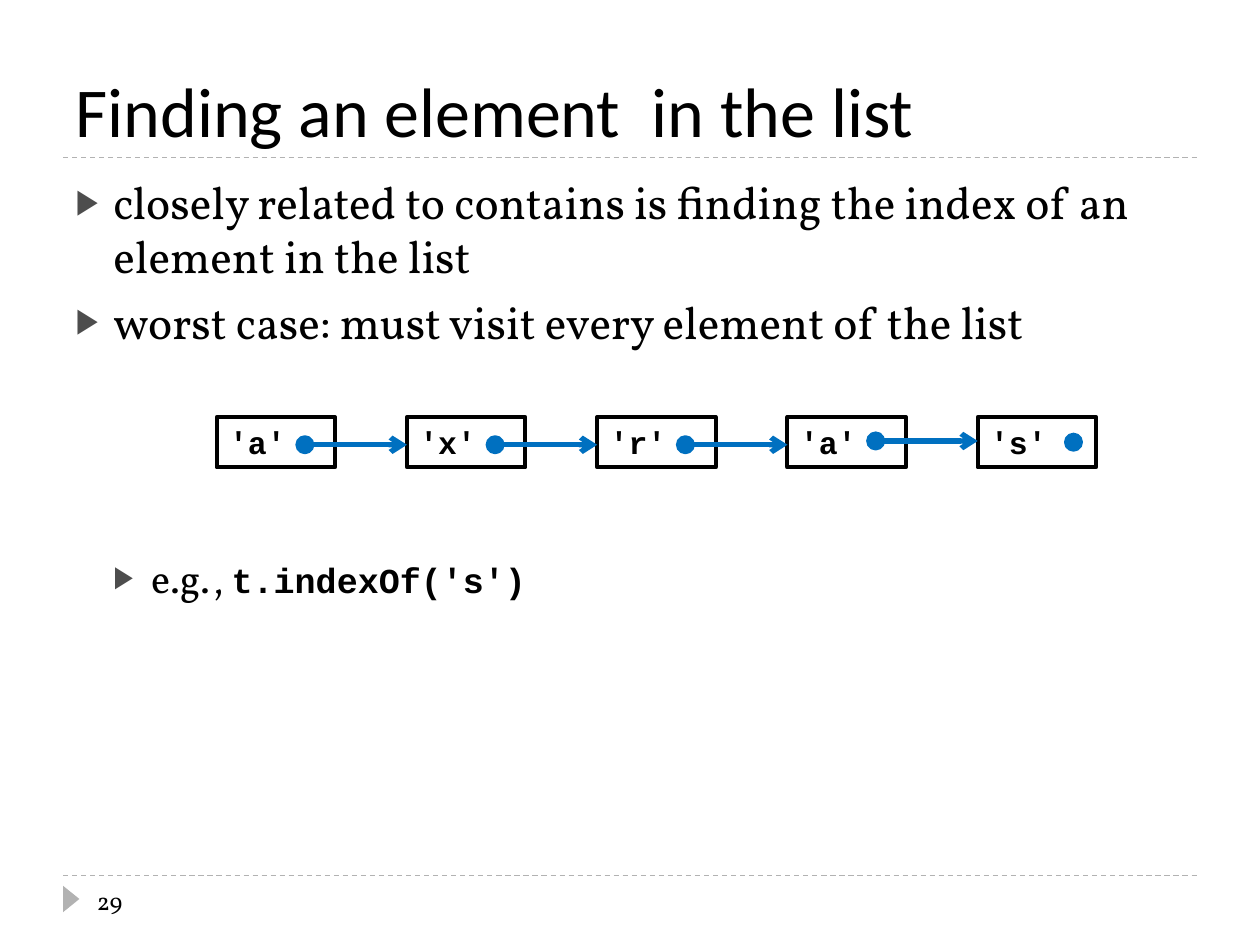
from pptx import Presentation
from pptx.dml.color import RGBColor
from pptx.enum.dml import MSO_LINE
from pptx.enum.shapes import MSO_CONNECTOR, MSO_SHAPE
from pptx.enum.text import MSO_ANCHOR, MSO_AUTO_SIZE, PP_ALIGN
from pptx.oxml.ns import qn
from pptx.util import Inches, Pt
from lxml.etree import SubElement

# Content
TITLE = "Finding an element  in the list"
SERIF, SANS, MONO = "Vollkorn", "Calibri", "Courier New"
BLACK, BLUE, GREY, DARK = "000000", "0070C0", "B2B2B2", "4D4D4D"
# (indent in inches, space before in points, runs of text, size, font, bold)
BULLETS = [
    (0.3, 6, [("closely related to contains is finding the index of an "
               "element in the list", 26, SERIF, False)]),
    (0.3, 6, [("worst case: must visit every element of the list", 26, SERIF, False)]),
    (0.6, 117, [("e.g., ", 23, SERIF, False), ("t.indexOf('s')", 20, MONO, True)]),
]
# (value, dot centre x from the node's left edge, dot centre y)
NODES = [("'a'", 0.7, 3.53), ("'x'", 0.7, 3.53), ("'r'", 0.7, 3.53),
         ("'a'", 0.7, 3.5), ("'s'", 0.76, 3.51)]
NODE_X, NODE_Y, NODE_W, NODE_H, STEP = 1.72, 3.31, 0.94, 0.4, 1.51
DOT = 0.13
RULES = [1.25, 6.95]


def color(hex_text):
    return RGBColor.from_string(hex_text)


def add_run(p, text, size, font, bold=False):
    r = p.add_run()
    r.text = text
    r.font.size, r.font.name, r.font.bold = Pt(size), font, bold
    r.font.color.rgb = color(BLACK)


def add_bullet(p, indent):
    pPr = p._p.get_or_add_pPr()
    pPr.set("marL", str(Inches(indent)))
    pPr.set("indent", str(Inches(-0.3)))
    clr = SubElement(pPr, qn("a:buClr"))
    SubElement(clr, qn("a:srgbClr"), val=DARK)
    SubElement(pPr, qn("a:buSzPct"), val="76000")
    SubElement(pPr, qn("a:buFont"), typeface="Arial")
    SubElement(pPr, qn("a:buChar"), char="▶")


def add_line(s, x1, y1, x2, y2, hex_text, width):
    c = s.shapes.add_connector(MSO_CONNECTOR.STRAIGHT, Inches(x1), Inches(y1),
                               Inches(x2), Inches(y2))
    c.line.color.rgb, c.line.width = color(hex_text), Pt(width)
    SubElement(c._element.spPr, qn("a:effectLst"))
    return c


def add_shape(s, kind, x, y, w, h, fill=None, line=None, width=0):
    sp = s.shapes.add_shape(kind, Inches(x), Inches(y), Inches(w), Inches(h))
    sp.shadow.inherit = False
    if fill:
        sp.fill.solid()
        sp.fill.fore_color.rgb = color(fill)
    else:
        sp.fill.background()
    if line:
        sp.line.color.rgb, sp.line.width = color(line), Pt(width)
    else:
        sp.line.fill.background()
    return sp


def place(sp, x, y, w, h, anchor):
    sp.left, sp.top, sp.width, sp.height = map(Inches, (x, y, w, h))
    tf = sp.text_frame
    tf.word_wrap, tf.auto_size = True, MSO_AUTO_SIZE.NONE
    tf.vertical_anchor = anchor
    return tf


prs = Presentation()
prs.slide_width, prs.slide_height = Inches(10), Inches(7.5)
s = prs.slides.add_slide(prs.slide_layouts[1])

# Title
tf = place(s.shapes.title, 0.5, 0.17, 9, 1.08, MSO_ANCHOR.BOTTOM)
tf.paragraphs[0].alignment = PP_ALIGN.LEFT
add_run(tf.paragraphs[0], TITLE, 40, SANS)

# Bullet list, with room for the diagram above the example
tf = place(s.placeholders[1], 0.5, 1.33, 9, 5.4, MSO_ANCHOR.TOP)
for i, (indent, before, runs) in enumerate(BULLETS):
    p = tf.add_paragraph() if i else tf.paragraphs[0]
    p.level = 1 if indent > 0.3 else 0
    p.space_before = Pt(before)
    add_bullet(p, indent)
    for run in runs:
        add_run(p, *run)

# Rules and slide number
for y in RULES:
    add_line(s, 0.5, y, 9.5, y, GREY, 0.75).line.dash_style = MSO_LINE.DASH
add_shape(s, MSO_SHAPE.ISOSCELES_TRIANGLE, 0.46, 7.07, 0.21, 0.13, GREY).rotation = 90
tb = s.shapes.add_textbox(0, 0, 0, 0)
tf = place(tb, 0.67, 6.95, 2.17, 0.4, MSO_ANCHOR.MIDDLE)
add_run(tf.paragraphs[0], "29", 14, SERIF)

# Linked list: boxes, then arrows, then dots
for i, (value, _, _) in enumerate(NODES):
    sp = add_shape(s, MSO_SHAPE.RECTANGLE, NODE_X + i * STEP, NODE_Y, NODE_W, NODE_H,
                   line=BLACK, width=2.25)
    sp.text_frame.vertical_anchor = MSO_ANCHOR.MIDDLE
    p = sp.text_frame.paragraphs[0]
    p.alignment = PP_ALIGN.LEFT
    add_run(p, value, 18, MONO, True)

for i, (_, dx, y) in enumerate(NODES[:-1]):
    x = NODE_X + i * STEP
    c = add_line(s, x + dx, y, x + STEP, y, BLUE, 3)
    SubElement(c.line._get_or_add_ln(), qn("a:tailEnd"), type="arrow")

for i, (_, dx, y) in enumerate(NODES):
    add_shape(s, MSO_SHAPE.OVAL, NODE_X + i * STEP + dx - DOT / 2, y - DOT / 2,
              DOT, DOT, BLUE, BLUE, 1.5)

prs.save("out.pptx")
